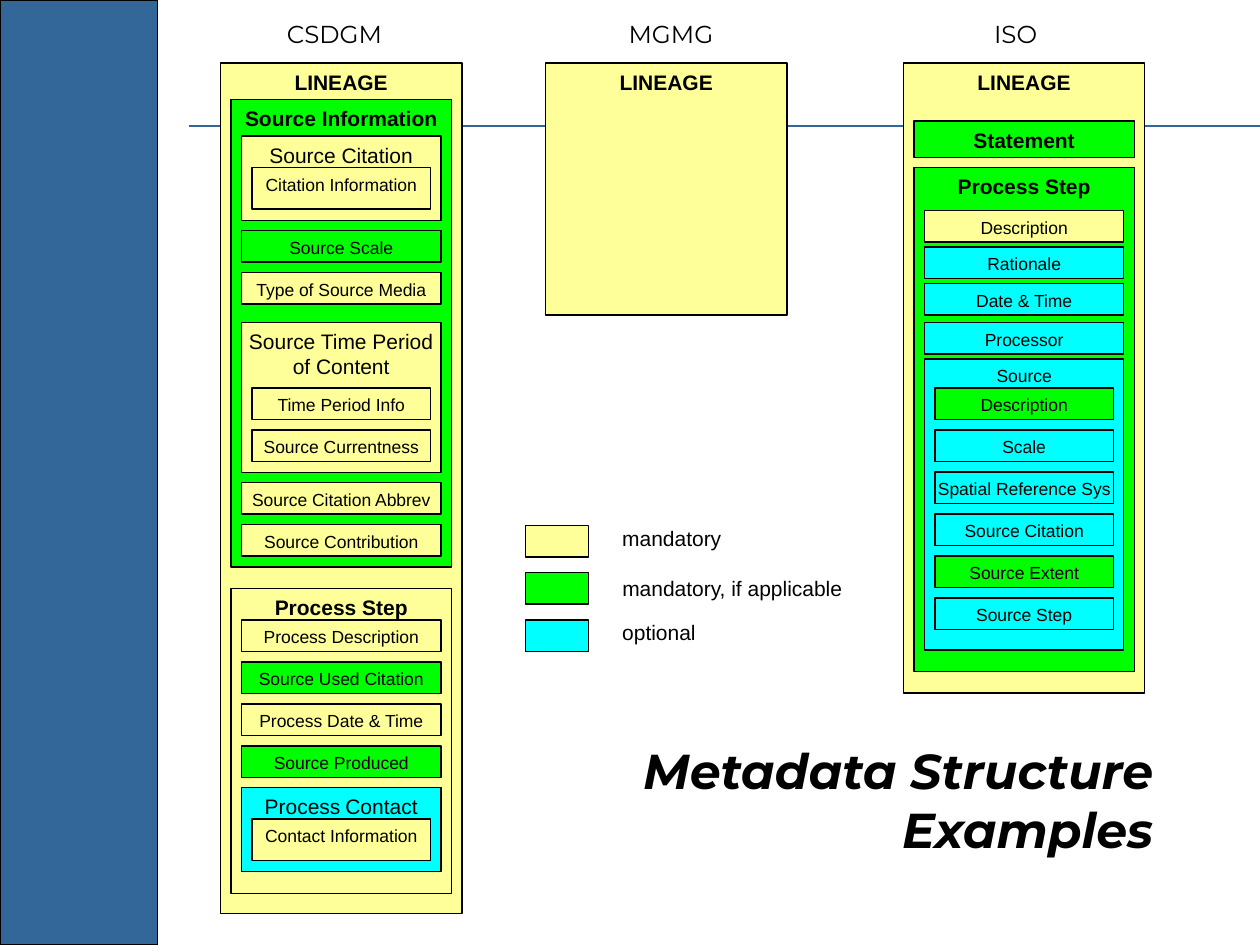
from pptx import Presentation
from pptx.dml.color import RGBColor
from pptx.enum.shapes import MSO_CONNECTOR, MSO_SHAPE
from pptx.enum.text import MSO_ANCHOR, PP_ALIGN
from pptx.oxml.ns import qn
from pptx.util import Inches, Pt
from lxml import etree

RECTANGLE, STRAIGHT = MSO_SHAPE.RECTANGLE, MSO_CONNECTOR.STRAIGHT
LEFT, CENTER, RIGHT = PP_ALIGN.LEFT, PP_ALIGN.CENTER, PP_ALIGN.RIGHT
TOP = MSO_ANCHOR.TOP

BLUE, BLACK = "336699", "000000"
MANDATORY, APPLICABLE, OPTIONAL = "FFFF99", "00FF00", "00FFFF"
BODY_FONT, TITLE_FONT = "Arial", "Montserrat"

COLUMN_WIDTH = 23 / 12
INSET = 1 / 12      # each nesting level is this much narrower per side
PITCH = 1 / 3       # usual step between stacked entries
ENTRY_HEIGHT = 0.25


def color(value):
    return RGBColor.from_string(value)


def write(frame, paragraphs, align, font=BODY_FONT, wrap=False, italic=False):
    """Fill a text frame; each paragraph is a list of (text, size, bold)."""
    frame.word_wrap = wrap
    frame.vertical_anchor = TOP
    for index, runs in enumerate(paragraphs):
        paragraph = frame.add_paragraph() if index else frame.paragraphs[0]
        paragraph.alignment = align
        for text, size, bold in runs:
            run = paragraph.add_run()
            run.text = text
            run.font.name = font
            run.font.size = Pt(size)
            run.font.bold = bold
            run.font.italic = italic
            run.font.color.rgb = color(BLACK)


def add_box(shapes, left, top, width, height, fill, paragraphs=()):
    shape = shapes.add_shape(RECTANGLE, Inches(left), Inches(top),
                             Inches(width), Inches(height))
    shape.shadow.inherit = False
    shape.fill.solid()
    shape.fill.fore_color.rgb = color(fill)
    shape.line.color.rgb = color(BLACK)
    shape.line.width = Pt(0.75)
    write(shape.text_frame, paragraphs, CENTER)


def add_label(shapes, left, top, width, height, text, size, align=LEFT,
              font=BODY_FONT, bold=False, **style):
    label = shapes.add_textbox(Inches(left), Inches(top), Inches(width), Inches(height))
    write(label.text_frame, [[(text, size, bold)]], align, font, **style)


def heading(text):
    return [[(text, 12, True)]]


def subheading(*lines):
    return [[(line, 12, False)] for line in lines]


def entry(text):
    return [[(text, 10, False)]]


def stack(level, top, entries, pitch=PITCH):
    """Rows for equally spaced entries, given as (fill, text)."""
    return [(level, top + index * pitch, ENTRY_HEIGHT, fill, entry(text))
            for index, (fill, text) in enumerate(entries)]


def add_column(slide, left, height, name, name_left, name_width, rows):
    """One standard: its name above a LINEAGE box that holds nested rows."""
    shapes = slide.shapes.add_group_shape().shapes
    lineage = (0, 0.5, height, MANDATORY, heading("LINEAGE"))
    for level, top, row_height, fill, paragraphs in [lineage] + rows:
        add_box(shapes, left + level * INSET, top, COLUMN_WIDTH - 2 * level * INSET,
                row_height, fill, paragraphs)
    add_label(shapes, name_left, 0.1, name_width, 0.33, name, 14, CENTER, TITLE_FONT)


def add_backdrop(slide):
    rule = slide.shapes.add_connector(STRAIGHT, Inches(1.5), Inches(1), Inches(10), Inches(1))
    rule.line.color.rgb = color(BLUE)
    rule.line.width = Pt(1.5)
    etree.SubElement(rule._element.spPr, qn("a:effectLst"))
    add_box(slide.shapes, 0, 0, 1.25, 7.5, BLUE)


def add_legend(slide, left, top):
    shapes = slide.shapes.add_group_shape().shapes
    # Fill, label offset from the top, label width with room to spare, label
    items = [
        (MANDATORY, -0.05, 1.1, "mandatory"),
        (APPLICABLE, 0.35, 2.05, "mandatory, if applicable"),
        (OPTIONAL, 0.7, 0.9, "optional"),
    ]
    for index, (fill, offset, width, text) in enumerate(items):
        add_box(shapes, left, top + index * 0.375, 0.5, 0.25, fill)
        add_label(shapes, left + 0.67, top + offset, width, 0.3, text, 12)


CSDGM_ROWS = [
    # Source information
    (1, 0.79, 3.71, APPLICABLE, heading("Source Information")),
    (2, 1.08, 0.67, MANDATORY, subheading("Source Citation")),
    (3, 1.33, 0.33, MANDATORY, entry("Citation Information")),
    *stack(2, 1.83, [(APPLICABLE, "Source Scale"),
                     (MANDATORY, "Type of Source Media")]),
    (2, 2.56, 1.19, MANDATORY, subheading("Source Time Period", "of Content")),
    *stack(3, 3.08, [(MANDATORY, "Time Period Info"),
                     (MANDATORY, "Source Currentness")]),
    *stack(2, 3.83, [(MANDATORY, "Source Citation Abbrev"),
                     (MANDATORY, "Source Contribution")]),
    # Process step
    (1, 4.67, 2.42, MANDATORY, heading("Process Step")),
    *stack(2, 4.92, [(MANDATORY, "Process Description"),
                     (APPLICABLE, "Source Used Citation"),
                     (MANDATORY, "Process Date & Time"),
                     (APPLICABLE, "Source Produced")]),
    (2, 6.25, 0.67, OPTIONAL,
     [[("Process", 12, False), (" ", 10, False), ("Contact", 12, False)]]),
    (3, 6.5, 0.33, MANDATORY, entry("Contact Information")),
]

ISO_ROWS = [
    (1, 0.96, 0.29, APPLICABLE, heading("Statement")),
    # Process step
    (1, 1.33, 4, APPLICABLE, heading("Process Step")),
    *stack(2, 1.67, [(MANDATORY, "Description"),
                     (OPTIONAL, "Rationale"),
                     (OPTIONAL, "Date & Time")], pitch=0.29),
    (2, 2.56, ENTRY_HEIGHT, OPTIONAL, entry("Processor")),
    # Source
    (2, 2.85, 2.31, OPTIONAL, entry("Source")),
    *stack(3, 3.08, [(APPLICABLE, "Description"),
                     (OPTIONAL, "Scale"),
                     (OPTIONAL, "Spatial Reference Sys"),
                     (OPTIONAL, "Source Citation"),
                     (APPLICABLE, "Source Extent"),
                     (OPTIONAL, "Source Step")]),
]


def main():
    presentation = Presentation()
    presentation.slide_width = Inches(10)
    presentation.slide_height = Inches(7.5)
    slide = presentation.slides.add_slide(presentation.slide_layouts[6])

    add_backdrop(slide)
    add_label(slide.shapes, 3.83, 5.83, 5.42, 1.63, "Metadata Structure Examples", 28,
              RIGHT, TITLE_FONT, bold=True, italic=True, wrap=True)
    add_legend(slide, 4.17, 4.17)
    add_column(slide, 1.75, 6.75, "CSDGM", 2.16, 0.99, CSDGM_ROWS)
    add_column(slide, 4.33, 2, "MGMG", 4.88, 0.89, [])
    add_column(slide, 7.17, 5, "ISO", 7.77, 0.58, ISO_ROWS)

    presentation.save("out.pptx")


if __name__ == "__main__":
    main()
